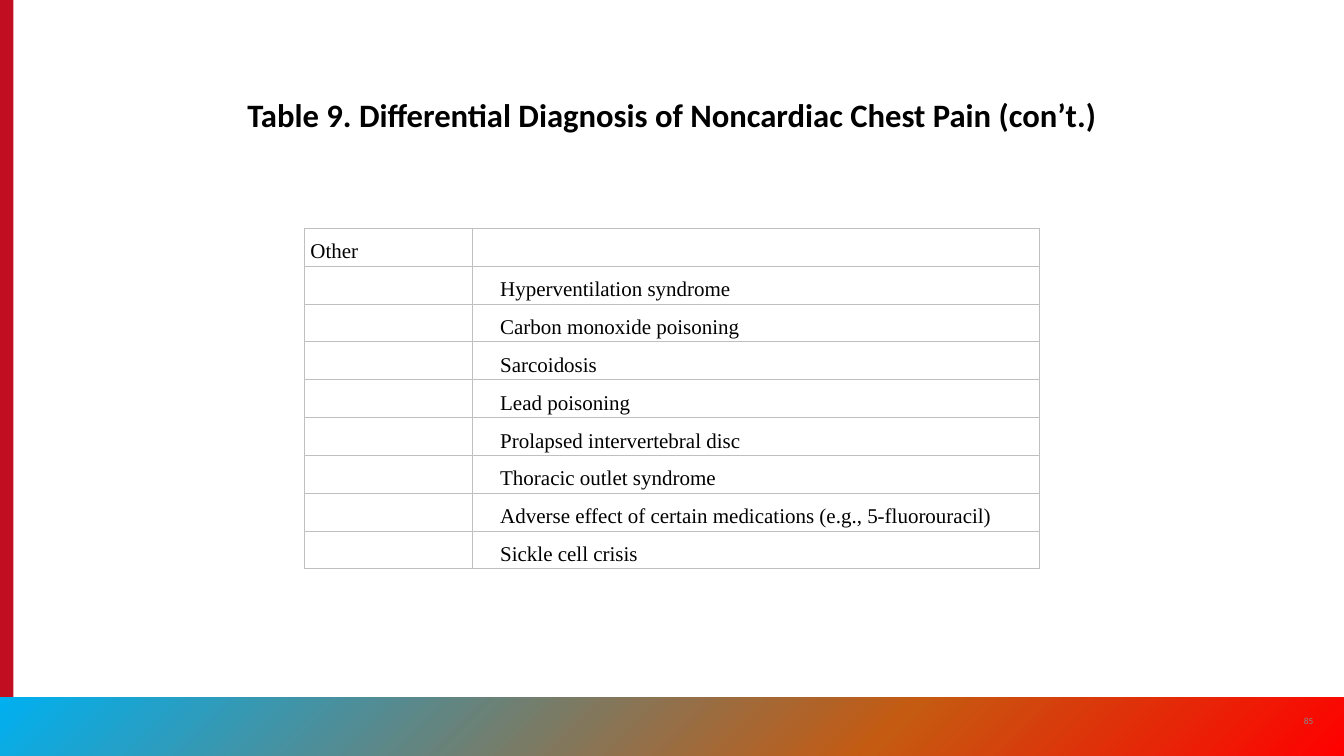
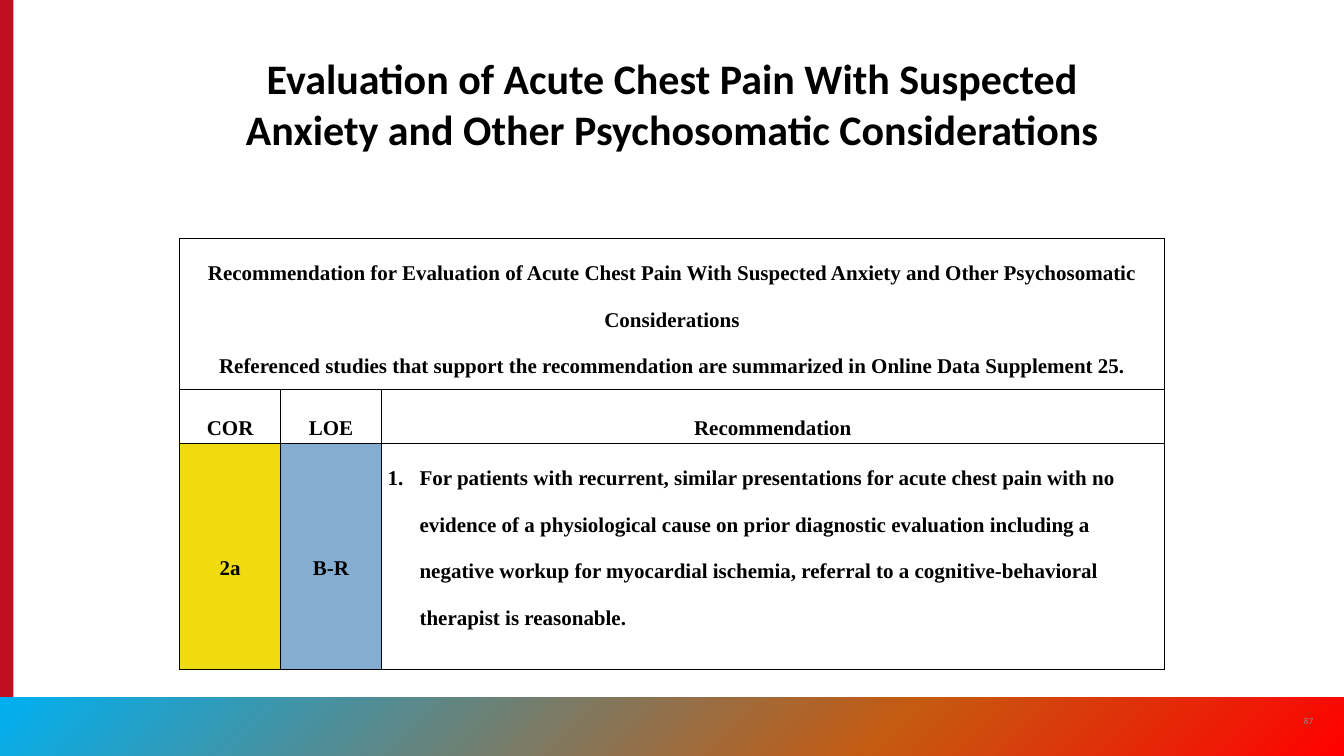
import copy

import pptx
import pptx.dml.color
import pptx.enum.shapes
import pptx.enum.text
import pptx.oxml
import pptx.oxml.ns
import pptx.util

Inches = pptx.util.Inches
Pt = pptx.util.Pt
ALIGN = pptx.enum.text.PP_ALIGN
ANCHOR = pptx.enum.text.MSO_ANCHOR
RECTANGLE = pptx.enum.shapes.MSO_SHAPE.RECTANGLE

COLORS = {
    "red": "C10E21",
    "band_start": "00B0F0",
    "band_middle": "C55A11",
    "band_end": "FF0000",
    "number": "8A8B8A",
    "text": "000000",
    "pale_border": "BFBFBF",
    "cor_2a": "F0DA10",
    "loe_br": "85ADD1",
}
BAND_STOPS = [(0, "band_start"), (0.66, "band_middle"), (1, "band_end")]
TITLE_FONT = "Calibri"
TABLE_FONT = "Times New Roman"

DIAGNOSES = [
    "Hyperventilation syndrome",
    "Carbon monoxide poisoning",
    "Sarcoidosis",
    "Lead poisoning",
    "Prolapsed intervertebral disc",
    "Thoracic outlet syndrome",
    "Adverse effect of certain medications (e.g., 5-fluorouracil)",
    "Sickle cell crisis",
]
RECOMMENDATION_HEADING = [
    "Recommendation for Evaluation of Acute Chest Pain With Suspected Anxiety "
    "and Other Psychosomatic Considerations",
    "Referenced studies that support the recommendation are summarized in "
    "Online Data Supplement 25.",
]
RECOMMENDATION = (
    "For patients with recurrent, similar presentations for acute chest pain with no "
    "evidence of a physiological cause on prior diagnostic evaluation including a "
    "negative workup for myocardial ischemia, referral to a cognitive-behavioral "
    "therapist is reasonable."
)


def color(name):
    """Return the palette colour of that name."""
    return pptx.dml.color.RGBColor.from_string(COLORS[name])


def inches(box):
    """Turn a box of plain numbers into lengths."""
    return [Inches(length) for length in box]


def style_font(text, name, size, bold=False, tint="text"):
    """Set the font of a paragraph or run."""
    font = text.font
    font.name, font.size, font.bold = name, Pt(size), bold
    font.color.rgb = color(tint)


def add_bar(slide, box):
    """Add a plain rectangle without line or shadow."""
    bar = slide.shapes.add_shape(RECTANGLE, *inches(box))
    bar.shadow.inherit = False
    bar.line.fill.background()
    return bar


def add_gradient_band(slide, box):
    """Add the three-colour band at the foot of a slide."""
    band = add_bar(slide, box)
    band.fill.gradient()
    band.fill.gradient_angle = 315
    stop_list = band.element.spPr.find(".//" + pptx.oxml.ns.qn("a:gsLst"))
    stop_list.append(copy.deepcopy(stop_list[-1]))
    for stop, (position, name) in zip(band.fill.gradient_stops, BAND_STOPS):
        stop.position = position
        stop.color.rgb = color(name)


def add_page_number(slide, box, number):
    """Add the page number in the lower right corner."""
    frame = slide.shapes.add_textbox(*inches(box)).text_frame
    frame.word_wrap = True
    frame.vertical_anchor = ANCHOR.MIDDLE
    paragraph = frame.paragraphs[0]
    paragraph.text = str(number)
    paragraph.alignment = ALIGN.CENTER
    style_font(paragraph, TITLE_FONT, 8, tint="number")


def add_titled_slide(deck, title, title_box, title_size, number):
    """Add a slide with its title, side bar, foot band and page number."""
    slide = deck.slides.add_slide(deck.slide_layouts[5])
    side_bar = add_bar(slide, (0, 0, 0.16, 9))
    side_bar.fill.solid()
    side_bar.fill.fore_color.rgb = color("red")
    add_gradient_band(slide, (0, 8.3, 16, 0.7))
    add_page_number(slide, (15.34, 8.34, 0.48, 0.48), number)

    heading = slide.shapes.title
    heading.left, heading.top, heading.width, heading.height = inches(title_box)
    frame = heading.text_frame
    frame.text = title
    frame.word_wrap = True
    frame.auto_size = pptx.enum.text.MSO_AUTO_SIZE.NONE
    frame.vertical_anchor = ANCHOR.TOP
    frame.paragraphs[0].alignment = ALIGN.CENTER
    style_font(frame.paragraphs[0], TITLE_FONT, title_size, bold=True)
    return slide


def add_bordered_table(slide, left, top, widths, heights, border):
    """Add an unfilled table with thin borders on every cell."""
    box = inches((left, top, sum(widths), sum(heights)))
    table = slide.shapes.add_table(len(heights), len(widths), *box).table
    table.first_row = table.horz_banding = False
    for column, width in zip(table.columns, widths):
        column.width = Inches(width)
    for row, height in zip(table.rows, heights):
        row.height = Inches(height)
    for cell in table.iter_cells():
        cell.margin_left = cell.margin_right = Pt(5.4)
        cell.margin_top = cell.margin_bottom = 0
        properties = cell._tc.get_or_add_tcPr()
        for side in ("lnL", "lnR", "lnT", "lnB"):
            properties.append(pptx.oxml.parse_xml(
                f'<a:{side} {pptx.oxml.ns.nsdecls("a")} w="{Pt(1)}"><a:solidFill>'
                f'<a:srgbClr val="{COLORS[border]}"/></a:solidFill></a:{side}>'
            ))
        cell.fill.background()
    return table


def indent(paragraph, left, first=0):
    """Set the left margin and first-line indent of a paragraph."""
    properties = paragraph._p.get_or_add_pPr()
    properties.set("marL", str(Inches(left)))
    properties.set("indent", str(Inches(first)))
    return properties


def write_cell(cell, lines, spacing, bold=False, align=ALIGN.LEFT, anchor=ANCHOR.TOP):
    """Write paragraphs into a table cell."""
    cell.text = "\n".join(lines)
    cell.vertical_anchor = anchor
    for paragraph in cell.text_frame.paragraphs:
        paragraph.alignment = align
        paragraph.line_spacing = spacing
        for run in paragraph.runs:
            style_font(run, TABLE_FONT, 18, bold)


def fill_diagnosis_table(slide, left, top):
    """Add the table of other causes of chest pain."""
    heights = [3.74 / (len(DIAGNOSES) + 1)] * (len(DIAGNOSES) + 1)
    table = add_bordered_table(slide, left, top, (2.01, 6.74), heights, "pale_border")
    write_cell(table.cell(0, 0), ["Other"], 1.5)
    for row, diagnosis in enumerate(DIAGNOSES, start=1):
        cell = table.cell(row, 1)
        write_cell(cell, [diagnosis], 1.5)
        paragraph = cell.text_frame.paragraphs[0]
        indent(paragraph, 0.25)
        paragraph.space_after = Pt(5)


def fill_recommendation_table(slide, left, top):
    """Add the table with the class, level and text of the recommendation."""
    table = add_bordered_table(
        slide, left, top, (1.2, 1.2, 9.32), (1.66, 0.64, 2.69), "text")
    table.cell(0, 0).merge(table.cell(0, 2))
    write_cell(table.cell(0, 0), RECOMMENDATION_HEADING, 2, True, ALIGN.CENTER)
    rows = [("COR", "LOE", "Recommendation"), ("2a", "B-R")]
    for row, texts in enumerate(rows, start=1):
        for column, text in enumerate(texts):
            write_cell(table.cell(row, column), [text], 2, True,
                       ALIGN.CENTER, ANCHOR.MIDDLE)
    for column, name in enumerate(("cor_2a", "loe_br")):
        rating = table.cell(2, column)
        rating.fill.solid()
        rating.fill.fore_color.rgb = color(name)

    advice = table.cell(2, 2)
    write_cell(advice, [RECOMMENDATION], 2, True)
    properties = indent(advice.text_frame.paragraphs[0], 0.38, -0.38)
    properties.append(pptx.oxml.parse_xml(
        f'<a:buAutoNum {pptx.oxml.ns.nsdecls("a")} type="arabicPeriod"/>'))


def main():
    """Build and save the two slides."""
    deck = pptx.Presentation()
    deck.slide_width, deck.slide_height = Inches(16), Inches(9)
    diagnosis = add_titled_slide(
        deck, "Table 9. Differential Diagnosis of Noncardiac Chest Pain (con’t.)",
        (2.58, 1.08, 10.83, 1.05), 28, 85)
    fill_diagnosis_table(diagnosis, 3.62, 2.72)
    evaluation = add_titled_slide(
        deck, "Evaluation of Acute Chest Pain With Suspected Anxiety "
        "and Other Psychosomatic Considerations",
        (2.41, 0.58, 11.19, 1), 36, 87)
    fill_recommendation_table(evaluation, 2.14, 2.84)
    deck.save("out.pptx")


if __name__ == "__main__":
    main()
